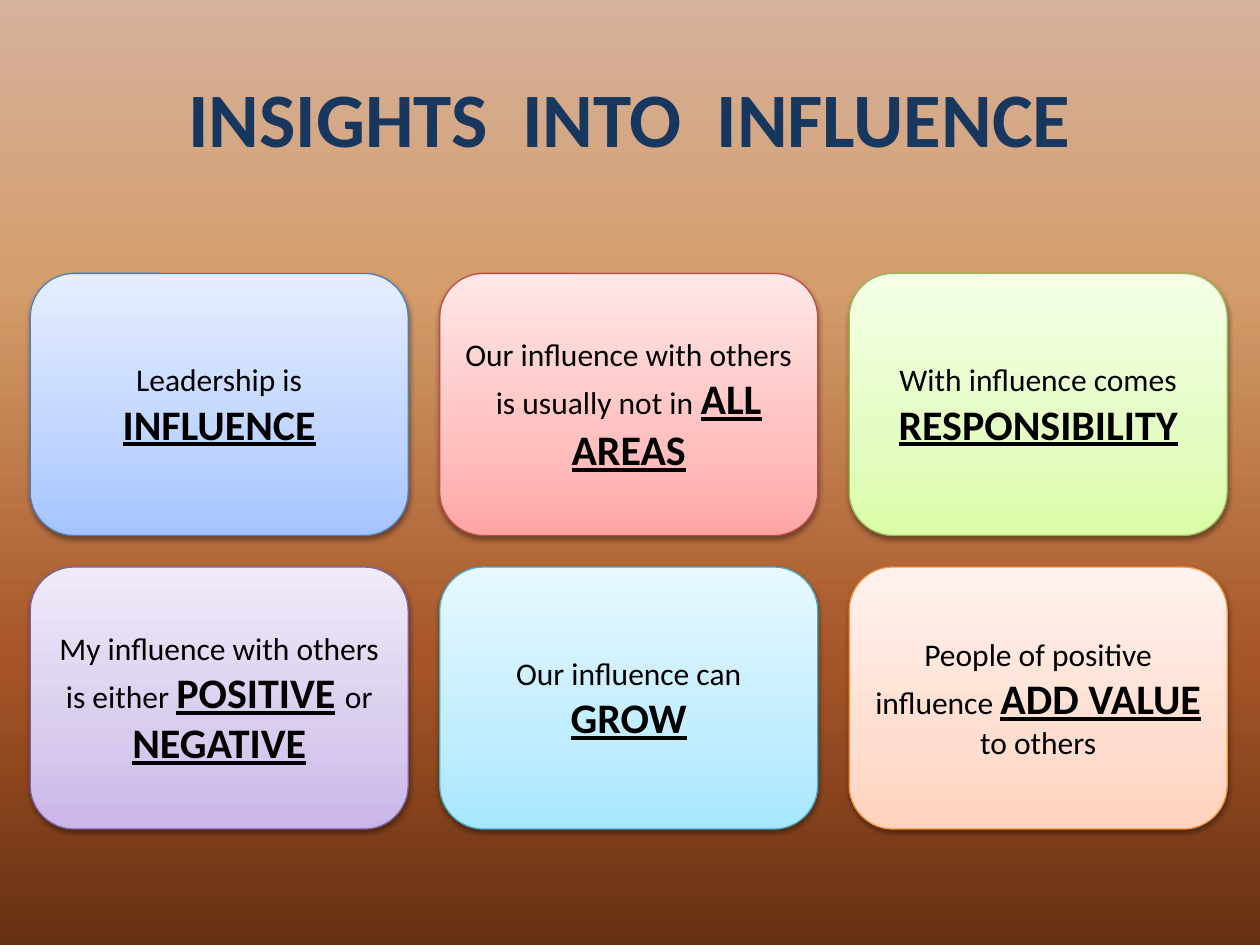
from lxml import etree
from pptx import Presentation
from pptx.dml.color import RGBColor
from pptx.enum.shapes import MSO_SHAPE
from pptx.enum.text import MSO_ANCHOR, PP_ALIGN
from pptx.oxml.ns import qn
from pptx.util import Inches, Pt

ROUNDED = MSO_SHAPE.ROUNDED_RECTANGLE
MIDDLE = MSO_ANCHOR.MIDDLE
CENTER = PP_ALIGN.CENTER
FONT = "Calibri"

# Card grid in inches
LEFT, TOP = 0.24, 2.17
CARD_W, CARD_H = 3, 2.08
STEP_X, STEP_Y = 3.25, 2.33
COLUMNS = 3

BACKGROUND = [(0, "D6B19C"), (30, "D49E6C"), (70, "A65528"), (100, "663012")]

# Each card: gradient colours from bottom to top, line colour, text pieces.
# Pieces marked with * are key words.
CARDS = [
    (("A4C4FF", "BFD4FF", "E6EEFF"), "4B7EBC",
     ["Leadership is ", "*INFLUENCE"]),
    (("FFA6A5", "FFC0BF", "FFE7E7"), "BF4C48",
     ["Our influence with others is usually not in ", "*ALL AREAS"]),
    (("DAFDA7", "E4FCC2", "F5FFE7"), "98B955",
     ["With influence comes ", "*RESPONSIBILITY"]),
    (("C9B5E8", "D8CBEE", "F0EAF9"), "7D60A0",
     ["My influence with others is either ", "*POSITIVE", " ", "or", " ",
      "*NEGATIVE"]),
    (("A7E6FF", "C1EDFF", "E7F8FF"), "46AAC5",
     ["Our influence can ", "*GROW"]),
    (("FFD2BD", "FFDED0", "FFF2ED"), "F69240",
     ["People of positive influence ", "*ADD VALUE", " ", "to others"]),
]


def rgb(value):
    return RGBColor.from_string(value)


def set_gradient(fill, element, stops, angle):
    """Fill with any number of (percent, colour) stops."""
    fill.gradient()
    fill.gradient_angle = angle
    stop_list = element.find(".//" + qn("a:gsLst"))
    for old in list(stop_list):
        stop_list.remove(old)
    for percent, color in stops:
        gs = etree.SubElement(stop_list, qn("a:gs"), pos=str(percent * 1000))
        etree.SubElement(gs, qn("a:srgbClr"), val=color)


def add_shadow(shape):
    shape.shadow.inherit = False
    effects = shape._element.spPr.find(qn("a:effectLst"))
    shadow = etree.SubElement(
        effects, qn("a:outerShdw"), blurRad=str(Pt(3.1)), dist=str(Pt(1.6)),
        dir="5400000", rotWithShape="0")
    color = etree.SubElement(shadow, qn("a:srgbClr"), val="000000")
    etree.SubElement(color, qn("a:alpha"), val="38000")


def add_run(p, text, size, color, bold=False, underline=False):
    r = p.add_run()
    r.text = text
    r.font.name = FONT
    r.font.size = Pt(size)
    r.font.color.rgb = rgb(color)
    r.font.bold = bold
    r.font.underline = underline


def add_title(s, text):
    title = s.shapes.title
    title.left, title.top = Inches(0.5), Inches(0.3)
    title.width, title.height = Inches(9), Inches(1.25)
    tf = title.text_frame
    tf.vertical_anchor = MIDDLE
    p = tf.paragraphs[0]
    p.alignment = CENTER
    add_run(p, text, 44, "17375E", bold=True)


def add_card(s, index, colors, line, pieces):
    row, column = divmod(index, COLUMNS)
    sp = s.shapes.add_shape(
        ROUNDED, Inches(LEFT + column * STEP_X), Inches(TOP + row * STEP_Y),
        Inches(CARD_W), Inches(CARD_H))
    set_gradient(sp.fill, sp._element.spPr, zip((0, 35, 100), colors), 90)
    sp.line.color.rgb = rgb(line)
    sp.line.width = Pt(0.75)
    add_shadow(sp)

    tf = sp.text_frame
    tf.word_wrap = True
    tf.vertical_anchor = MIDDLE
    tf.margin_left = tf.margin_right = Inches(0.07)
    tf.margin_top = tf.margin_bottom = Inches(0.07)
    p = tf.paragraphs[0]
    p.alignment = CENTER
    for piece in pieces:
        key = piece.startswith("*")
        size = 24 if key or piece == " " else 18
        add_run(p, piece.lstrip("*"), size, "000000", key, key)


def main():
    prs = Presentation()
    prs.slide_width, prs.slide_height = Inches(10), Inches(7.5)
    s = prs.slides.add_slide(prs.slide_layouts[5])

    # Background and title
    set_gradient(s.background.fill, s._element, BACKGROUND, 270)
    add_title(s, "INSIGHTS  INTO  INFLUENCE")

    # Grid of insight cards
    for index, (colors, line, pieces) in enumerate(CARDS):
        add_card(s, index, colors, line, pieces)

    prs.save("out.pptx")


if __name__ == "__main__":
    main()
